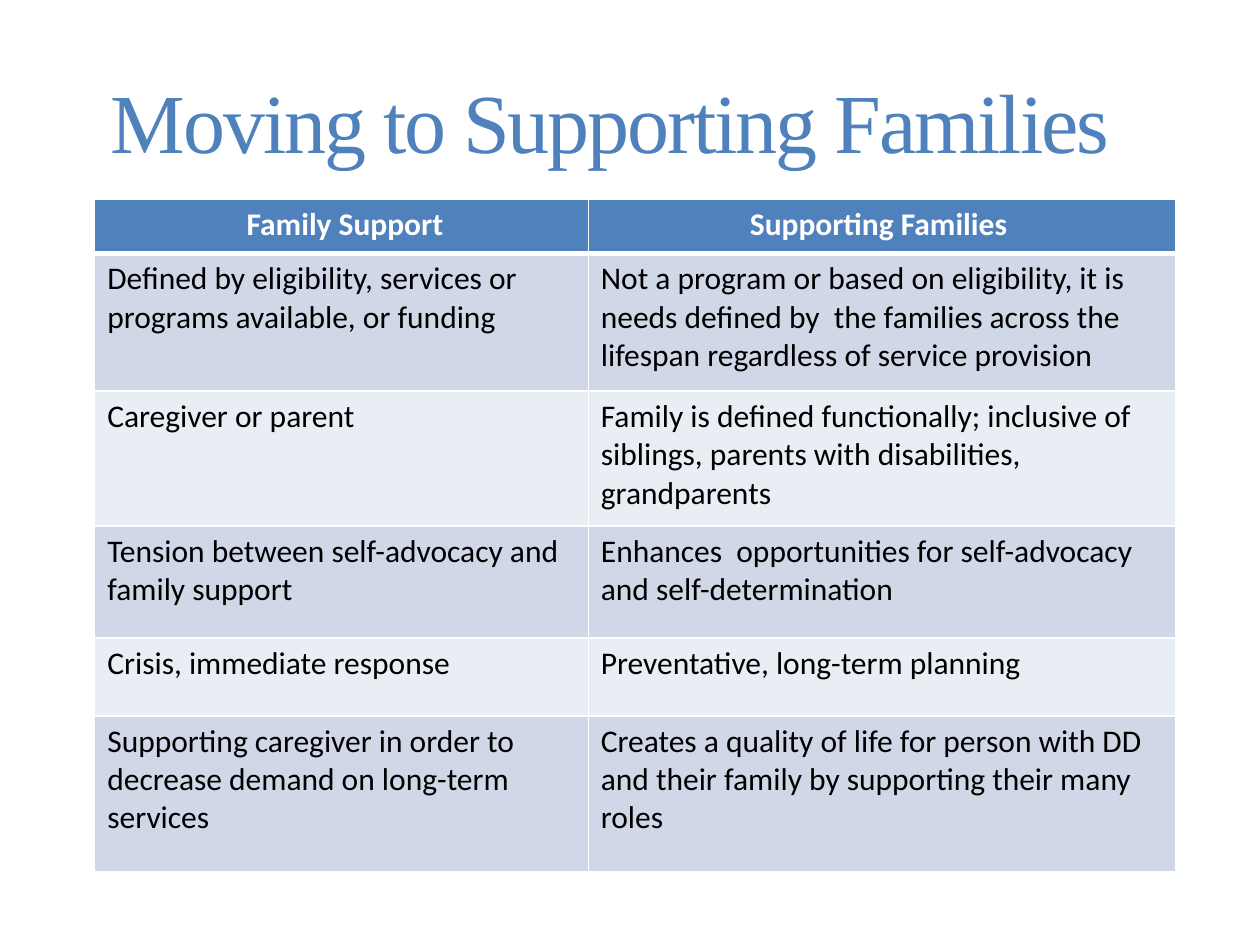
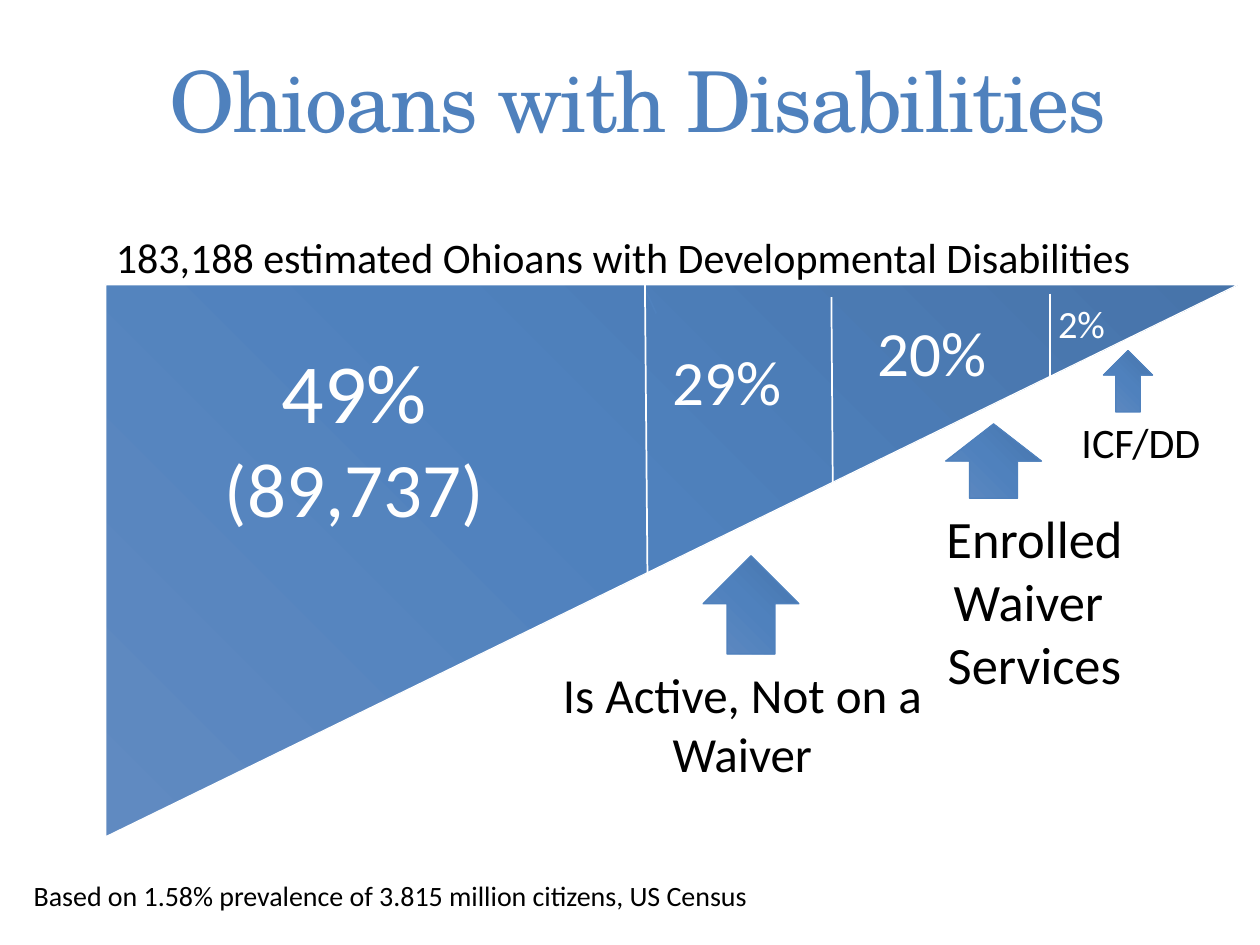
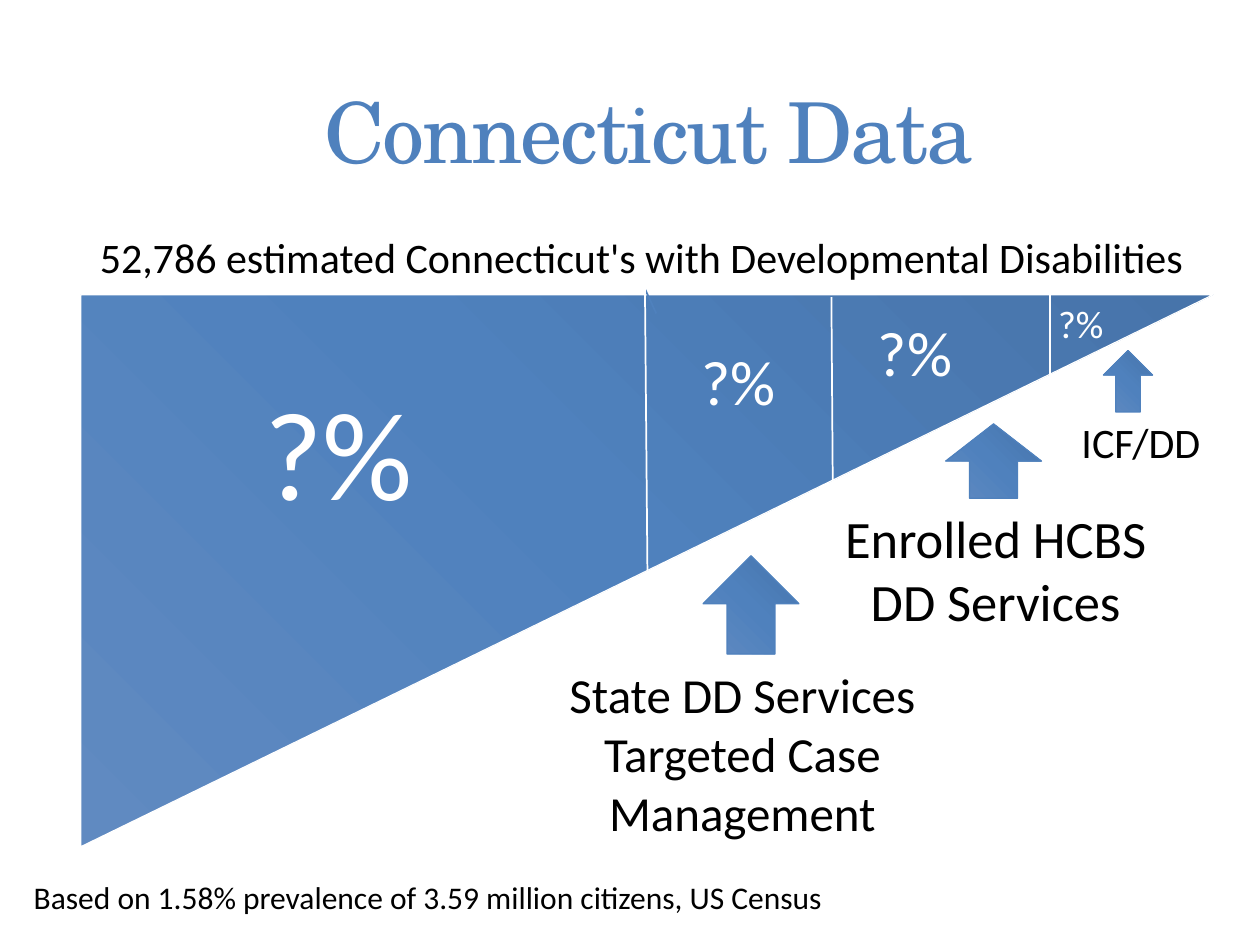
from copy import deepcopy

from lxml.etree import SubElement
from pptx import Presentation
from pptx.dml.color import RGBColor
from pptx.enum.shapes import MSO_CONNECTOR as Connector, MSO_SHAPE as Shape
from pptx.enum.text import MSO_ANCHOR as Anchor, PP_ALIGN as Align
from pptx.oxml.ns import qn
from pptx.util import Cm, Pt

COLOURS = {"blue": "4F81BD", "light": "608AC1", "dark": "4774AA",
           "white": "FFFFFF", "black": "000000",
           "band_a": "D0D8E8", "band_b": "E9EDF4"}
BODY_FONT = "Calibri"

# Content: titles as text, font, frame (left, top, width, height in cm)
TITLES = [
    ("Moving to Supporting Families ", "Times New Roman", (1.27, 0.25, 22.45, 4.6)),
    ("Ohioans with Disabilities ", "TeX Gyre Schola", (1.85, 0.58, 22.45, 3.07)),
    ("Connecticut Data", "TeX Gyre Schola", (1.85, 1.14, 22.45, 3.2)),
]

# Content: comparison table
COMPARISON = [
    (" Family Support", "Supporting Families "),
    ("Defined by eligibility, services or programs available, or funding",
     "Not a program or based on eligibility, it is needs defined by  the families "
     "across the lifespan regardless of service provision"),
    ("Caregiver or parent",
     "Family is defined functionally; inclusive of siblings, parents with "
     "disabilities, grandparents"),
    ("Tension between self-advocacy and family support",
     "Enhances  opportunities for self-advocacy and self-determination"),
    ("Crisis, immediate response", "Preventative, long-term planning"),
    ("Supporting caregiver in order to decrease demand on long-term services",
     "Creates a quality of life for person with DD and their family by supporting "
     "their many roles"),
]
TABLE_ORIGIN = (1.91, 4.02)
COLUMN_WIDTHS = (9.95, 11.85)
ROW_HEIGHTS = (1.09, 2.77, 2.72, 2.26, 1.57, 3.15)

# Content: labels as lines, size, colour, alignment, frame
# A line is a string, or a list of (text, size) spans
OHIO_LABELS = [
    (["183,188 estimated Ohioans with Developmental Disabilities "],
     24, "black", Align.CENTER, (-2.72, 4.55, 30.76, 1.27)),
    (["49%", [("(", 42), ("89,737", 44), (")", 42)]],
     48, "white", Align.CENTER, (1.85, 6.73, 10.59, 4.19)),
    (["29%"], 36, "white", Align.LEFT, (13.31, 6.78, 5.56, 1.8)),
    (["20%"], 36, "white", Align.LEFT, (17.45, 6.2, 5.56, 1.8)),
    (["2%"], 22, "white", Align.LEFT, (21.08, 5.92, 4, 1.19)),
    (["Is Active, Not on a Waiver"],
     28, "black", Align.CENTER, (10.8, 13.28, 8.33, 2.64)),
    (["Enrolled Waiver  Services"],
     30, "black", Align.CENTER, (17.68, 10.08, 6.35, 4.11)),
    (["Based on 1.58% prevalence of 3.815 million citizens, US Census"],
     16, "black", Align.LEFT, (0.43, 17.58, 17.7, 1.4)),
]
CONNECTICUT_LABELS = [
    (["52,786 estimated Connecticut's with Developmental Disabilities "],
     24, "black", Align.CENTER, (-2.72, 4.55, 31.5, 1.27)),
    (["?%"], 72, "white", Align.LEFT, (5.08, 7.42, 9.53, 3.33)),
    (["?%"], 36, "white", Align.LEFT, (13.89, 6.78, 4.98, 1.8)),
    (["?%"], 36, "white", Align.LEFT, (17.45, 6.2, 5.56, 1.8)),
    (["?%"], 22, "white", Align.LEFT, (21.08, 5.92, 4, 1.19)),
    (["State DD Services", "Targeted Case Management"],
     28, "black", Align.CENTER, (10.8, 13.28, 8.33, 3.84)),
    (["Enrolled HCBS DD Services"],
     30, "black", Align.CENTER, (16.15, 10.08, 7.85, 2.82)),
    (["Based on 1.58% prevalence of 3.59 million citizens, US Census"],
     18, "black", Align.LEFT, (0.43, 17.58, 17.7, 1.02)),
]
SHARED_LABEL = (["ICF/DD"], 24, "black", Align.CENTER, (21.03, 8.28, 3.94, 1.27))

# Wedge parts: size, dividers (colour, start, end), arrows before rotation
WEDGE_SIZE = (22.83, 11.13)
DIVIDERS = [
    ("blue", (13, 5.82), (13.23, 6.32)),
    ("white", (13, 5.64), (13.06, 12.5)),
    ("white", (16.76, 5.99), (16.81, 12.88)),
    ("white", (21.16, 5.92), (21.16, 9.4)),
]
ARROWS = [(14.15, 11.23, 1.98, 1.93), (19.28, 8.33, 1.5, 1.93),
          (22.12, 7.19, 1.24, 0.99)]


def colour(name):
    return RGBColor.from_string(COLOURS[name])


def cm(values):
    return [Cm(value) for value in values]


def add_span(para, text, ink, **style):
    span = para.add_run()
    span.text = text
    for key, value in style.items():
        setattr(span.font, key, value)
    span.font.color.rgb = colour(ink)
    return span


def add_box(page, frame):
    box = page.shapes.add_textbox(*cm(frame))
    box.text_frame.word_wrap = True
    return box.text_frame


def add_title(page, text, font, frame):
    body = add_box(page, frame)
    body.vertical_anchor = Anchor.MIDDLE
    para = body.paragraphs[0]
    para.alignment, para.line_spacing = Align.CENTER, 0.9
    span = add_span(para, text, "blue", name=font, size=Pt(48))
    span.font._element.set("spc", "-120")


def add_label(page, lines, size, ink, align, frame):
    body = add_box(page, frame)
    for index, line in enumerate(lines):
        para = body.add_paragraph() if index else body.paragraphs[0]
        para.alignment = align
        spans = [(line, size)] if isinstance(line, str) else line
        for text, points in spans:
            add_span(para, text, ink, name=BODY_FONT, size=Pt(points))


def add_gradient_shape(page, kind, frame, rotation, edge):
    shape = page.shapes.add_shape(kind, *cm(frame))
    shape.shadow.inherit = False
    shape.rotation = rotation
    shape.fill.gradient()
    shape.fill.gradient_angle = 315
    stops = next(shape.element.iter(qn("a:gsLst")))
    stops.insert(1, deepcopy(stops[0]))
    for stop, position, name in zip(shape.fill.gradient_stops, (0, 0.5, 1),
                                    ("light", "blue", "dark")):
        stop.position = position
        stop.color.rgb = colour(name)
    shape.line.color.rgb = colour(edge)
    shape.line.width = Pt(0.75)
    return shape


def add_divider(page, ink, start, end):
    line = page.shapes.add_connector(Connector.STRAIGHT, *cm(start + end))
    line.line.color.rgb = colour(ink)
    line.line.width = Pt(1)
    SubElement(line.element.spPr, qn("a:effectLst"))


def set_borders(cell, widths):
    properties = cell._tc.get_or_add_tcPr()
    for index, (side, points) in enumerate(widths.items()):
        border = SubElement(properties, qn(f"a:ln{side}"), w=str(Pt(points)))
        fill = SubElement(border, qn("a:solidFill"))
        SubElement(fill, qn("a:srgbClr"), val=COLOURS["white"])
        properties.insert(index, border)


def add_comparison(page):
    size = (sum(COLUMN_WIDTHS), sum(ROW_HEIGHTS))
    table = page.shapes.add_table(len(COMPARISON), len(COLUMN_WIDTHS),
                                  *cm(TABLE_ORIGIN + size)).table
    for column, width in zip(table.columns, COLUMN_WIDTHS):
        column.width = Cm(width)
    for row, height in zip(table.rows, ROW_HEIGHTS):
        row.height = Cm(height)
    for number, texts in enumerate(COMPARISON):
        header = number == 0
        fill = "blue" if header else ("band_b", "band_a")[number % 2]
        for column, text in enumerate(texts):
            cell = table.cell(number, column)
            cell.fill.solid()
            cell.fill.fore_color.rgb = colour(fill)
            set_borders(cell, {"L": 1, "R": 1, "T": 3 if number == 1 else 1,
                               "B": 3 if header else 1})
            para = cell.text_frame.paragraphs[0]
            para.alignment = Align.CENTER if header else Align.LEFT
            add_span(para, text, "white" if header else "black",
                     name=BODY_FONT, size=Pt(18), bold=header)


def add_wedge(page, origin, labels):
    wedge = add_gradient_shape(page, Shape.RIGHT_TRIANGLE, origin + WEDGE_SIZE,
                               180, "white")
    wedge.element.spPr.find(qn("a:xfrm")).set("flipH", "1")
    for divider in DIVIDERS:
        add_divider(page, *divider)
    for frame in ARROWS:
        add_gradient_shape(page, Shape.RIGHT_ARROW, frame, 270, "blue")
    for label in labels + [SHARED_LABEL]:
        add_label(page, *label)


def main():
    deck = Presentation()
    deck.slide_width, deck.slide_height = cm((25.4, 19.05))
    pages = []
    for title in TITLES:
        page = deck.slides.add_slide(deck.slide_layouts[6])
        add_title(page, *title)
        pages.append(page)
    add_comparison(pages[0])
    add_wedge(pages[1], (2.13, 5.74), OHIO_LABELS)
    add_wedge(pages[2], (1.63, 5.94), CONNECTICUT_LABELS)
    deck.save("out.pptx")


if __name__ == "__main__":
    main()
